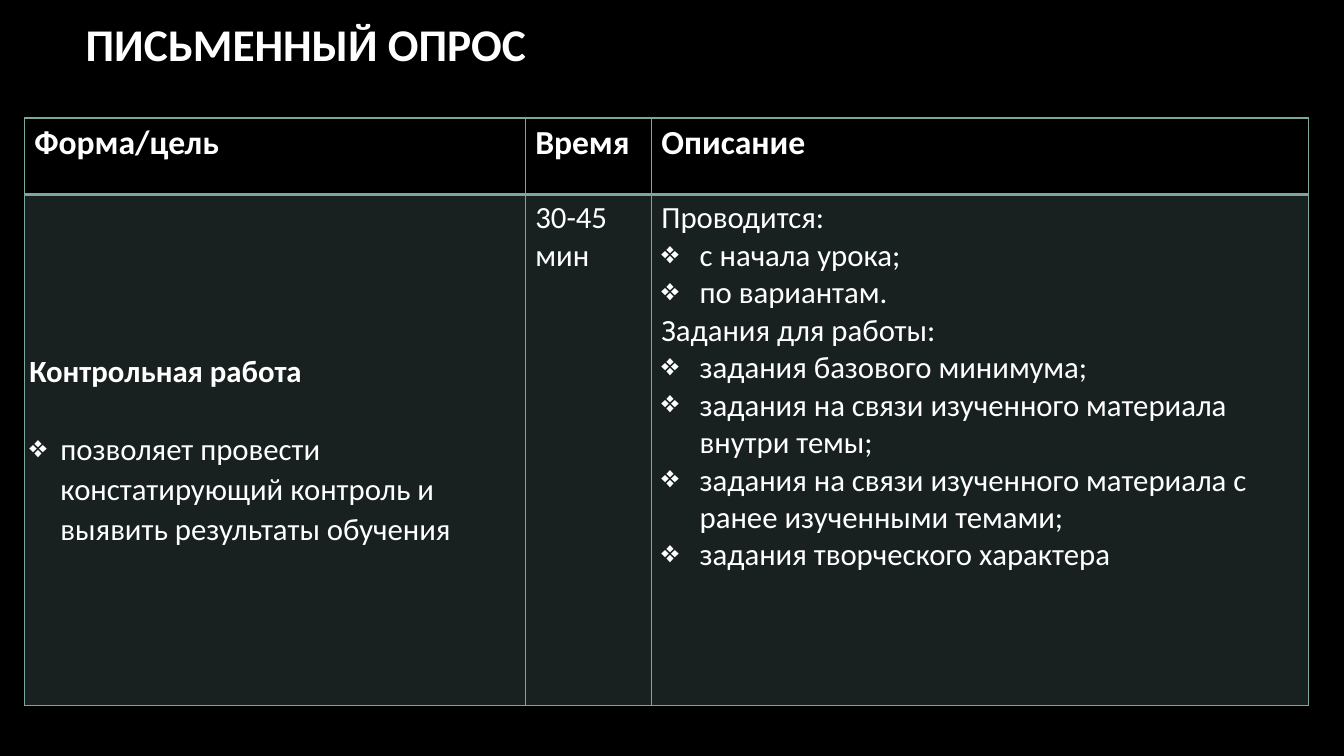
import pptx
import pptx.util
import pptx.dml.color
import pptx.enum.text
import pptx.oxml.ns
import lxml.etree

Inches = pptx.util.Inches
Pt = pptx.util.Pt
ANCHOR = pptx.enum.text.MSO_ANCHOR
COLORS = {"back": "000000", "text": "FFFFFF", "accent": "7BA79D"}


def rgb(name):
    return pptx.dml.color.RGBColor.from_string(COLORS[name])


def add_child(parent, tag, **attrs):
    return lxml.etree.SubElement(parent, pptx.oxml.ns.qn(tag), attrs)


def write(p, text, size=22, bold=False, indent=0, spacing=None, after=0):
    p.alignment = pptx.enum.text.PP_ALIGN.LEFT
    p.space_before, p.space_after = Pt(0), Pt(after)
    if spacing:
        p.line_spacing = spacing
    if indent:
        pPr = p._p.get_or_add_pPr()
        pPr.set("marL", str(Inches(indent)))
        pPr.set("indent", str(-Inches(indent)))
        add_child(pPr, "a:buChar", char="❖")
    r = p.add_run()
    r.text = text
    r.font.name, r.font.size, r.font.bold = "Calibri", Pt(size), bold
    r.font.color.rgb = rgb("text")


class Deck:
    def __init__(self, width, height):
        self.prs = pptx.Presentation()
        self.prs.slide_width, self.prs.slide_height = Inches(width), Inches(height)
        self.s = self.prs.slides.add_slide(self.prs.slide_layouts[5])
        self.s.background.fill.solid()
        self.s.background.fill.fore_color.rgb = rgb("back")

    def title(self, text, left, top, width, height):
        sp = self.s.shapes.title
        sp.left, sp.top = Inches(left), Inches(top)
        sp.width, sp.height = Inches(width), Inches(height)
        tf = sp.text_frame
        tf.vertical_anchor = ANCHOR.MIDDLE
        write(tf.paragraphs[0], text, size=32.4, bold=True)

    def table(self, left, top, cols, rows):
        frame = self.s.shapes.add_table(
            len(rows), len(cols), Inches(left), Inches(top),
            Inches(sum(cols)), Inches(sum(rows)))
        table = frame.table
        table.first_row = table.horz_banding = False
        for column, width in zip(table.columns, cols):
            column.width = Inches(width)
        for row, height in zip(table.rows, rows):
            row.height = Inches(height)
        return table

    def cell(self, cell, paragraphs, borders, opacity=0):
        for i, (text, style) in enumerate(paragraphs):
            tf = cell.text_frame
            write(tf.add_paragraph() if i else tf.paragraphs[0], text, **style)
        tcPr = cell._tc.get_or_add_tcPr()
        for side, width in zip("LRTB", borders):
            ln = add_child(tcPr, f"a:ln{side}", w=str(Pt(width)))
            fill = add_child(ln, "a:solidFill")
            add_child(fill, "a:srgbClr", val=COLORS["accent"])
        if opacity:
            cell.fill.solid()
            cell.fill.fore_color.rgb = rgb("accent")
            color = tcPr.find(".//" + pptx.oxml.ns.qn("a:srgbClr") + "/../../a:solidFill/a:srgbClr",
                              {"a": pptx.oxml.ns.nsdecls("a").split('"')[1]})
            color = tcPr[-1][0]
            add_child(color, "a:alpha", val=str(opacity * 1000))
        else:
            cell.fill.background()


def main():
    deck = Deck(13.33, 7.5)
    deck.title("ПИСЬМЕННЫЙ ОПРОС", 0.75, 0.13, 11.08, 0.61)
    table = deck.table(0.24, 1.17, [4.97, 1.25, 6.52], [0.76, 5.07])
    for i, text in enumerate(["Форма/цель", "Время", "Описание"]):
        deck.cell(table.cell(0, i), [(text, {"size": 24, "bold": True})], (1, 1, 1, 2))

    bullet = {"indent": 0.38}
    body = [
        [("Контрольная работа", {"bold": True, "spacing": 1.07, "after": 27}),
         ("позволяет провести констатирующий контроль и выявить результаты обучения",
          {"indent": 0.31, "spacing": 1.07})],
        [("30-45 мин", {})],
        [("Проводится:", {}),
         ("с начала урока;", bullet),
         ("по вариантам.", bullet),
         ("Задания для работы:", {}),
         ("задания базового минимума;", bullet),
         ("задания на связи изученного материала внутри темы;", bullet),
         ("задания на связи изученного материала с ранее изученными темами;", bullet),
         ("задания творческого характера", bullet)],
    ]
    for i, paragraphs in enumerate(body):
        deck.cell(table.cell(1, i), paragraphs, (1, 1, 2, 1), opacity=20)

    goal = table.cell(1, 0)
    goal.vertical_anchor = ANCHOR.MIDDLE
    goal.margin_left = goal.margin_right = Inches(0.05)
    deck.prs.save("out.pptx")


if __name__ == "__main__":
    main()
